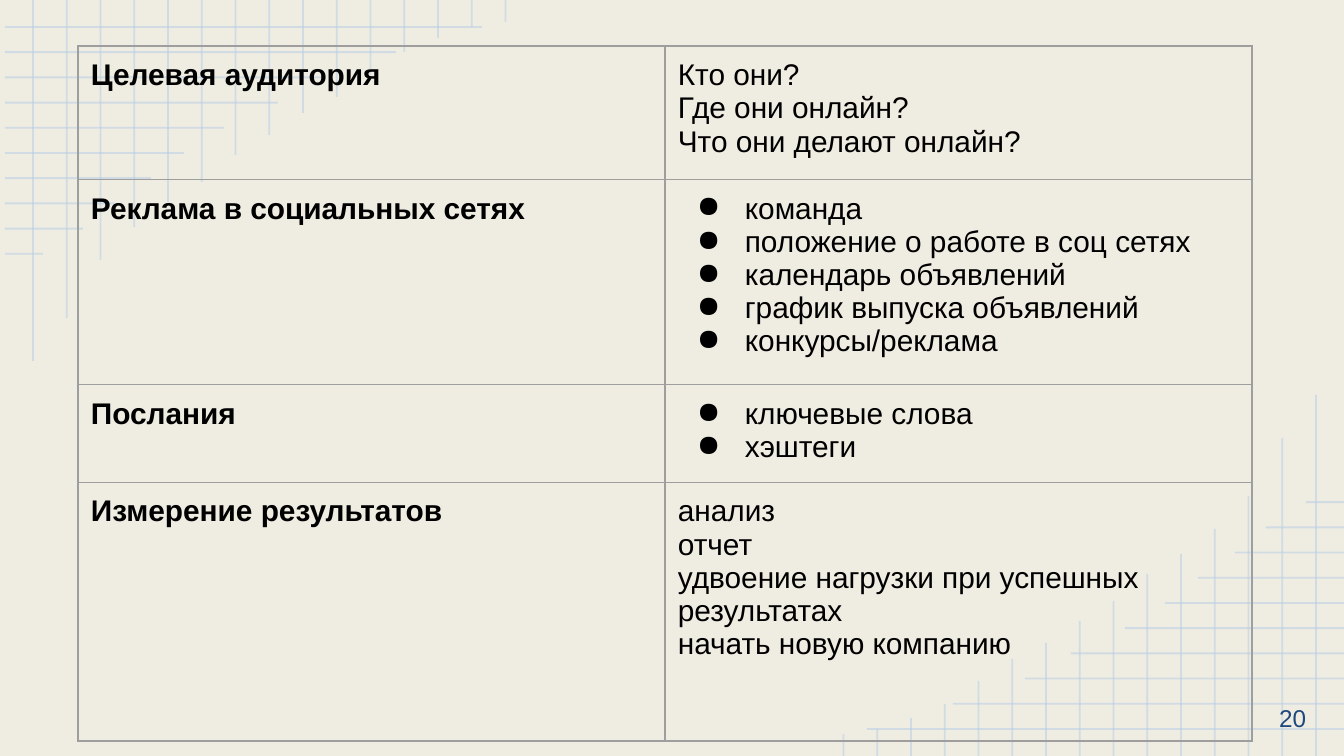
import pptx
import pptx.dml.color
import pptx.enum.shapes
import pptx.enum.text
import pptx.oxml.ns
import pptx.util
from lxml import etree

EMU_PER_PX = 914400 / 134.4
WIDTH, HEIGHT = 1344, 756
GRID_EDGE = 5
ROW_ENDS = [482, 396, 324, 278, 224, 184, 151, 114, 83, 43]
COLUMN_ENDS = [361, 318, 260, 227, 202, 182, 155, 135, 113, 97, 75, 52, 38, 27, 22]

PLAN = [
    ("Целевая аудитория", ["Кто они?", "Где они онлайн?", "Что они делают онлайн?"], False, 127),
    ("Реклама в социальных сетях",
     ["команда", "положение о работе в соц сетях", "календарь объявлений",
      "график выпуска объявлений", "конкурсы/реклама"], True, 193),
    ("Послания", ["ключевые слова", "хэштеги"], True, 93),
    ("Измерение результатов",
     ["анализ", "отчет", "удвоение нагрузки при успешных результатах",
      "начать новую компанию"], False, 259),
]


def px(length):
    return pptx.util.Emu(round(length * EMU_PER_PX))


def color(value):
    return pptx.dml.color.RGBColor.from_string(value)


def add_element(parent, tag, **attributes):
    return etree.SubElement(parent, pptx.oxml.ns.qn(tag), attributes)


def set_font(paragraph, size, value, bold=False):
    font = paragraph.font
    font.name = "Arial"
    font.size = pptx.util.Pt(size)
    font.bold = bold
    font.color.rgb = color(value)


def set_margins(box):
    box.margin_left = box.margin_right = box.margin_top = box.margin_bottom = px(13)


def add_grid_line(slide, start, end):
    line = slide.shapes.add_connector(
        pptx.enum.shapes.MSO_CONNECTOR.STRAIGHT, *map(px, start + end))
    line.line.color.rgb = color("B7CCE4")
    line.line.width = pptx.util.Pt(1)
    tint = line.line.fill._xPr.find(".//" + pptx.oxml.ns.qn("a:srgbClr"))
    add_element(tint, "a:alpha", val="53000")
    add_element(line._element.spPr, "a:effectLst")


def add_corner_grid(slide, turned):
    def place(x, y):
        return (WIDTH + GRID_EDGE - x, HEIGHT - y) if turned else (x, y)

    for index, end in enumerate(ROW_ENDS):
        y = 27 + 25.2 * index
        add_grid_line(slide, place(GRID_EDGE, y), place(end, y))
    for index, end in enumerate(COLUMN_ENDS):
        x = 33 + 33.75 * index
        add_grid_line(slide, place(x, end), place(x, 0))


def add_page_number(slide, number):
    box = slide.shapes.add_textbox(px(1239), px(680), px(80), px(76))
    frame = box.text_frame
    frame.word_wrap = True
    frame.vertical_anchor = pptx.enum.text.MSO_ANCHOR.MIDDLE
    set_margins(frame)
    frame.text = number
    paragraph = frame.paragraphs[0]
    paragraph.alignment = pptx.enum.text.PP_ALIGN.RIGHT
    set_font(paragraph, 13, "1F497D")


def add_bullet(paragraph):
    properties = paragraph._p.get_or_add_pPr()
    properties.set("marL", str(px(67)))
    properties.set("indent", str(px(-48)))
    bullet_color = add_element(properties, "a:buClr")
    add_element(bullet_color, "a:srgbClr", val="000000")
    add_element(properties, "a:buChar", char="●")


def set_borders(cell):
    properties = cell._tc.get_or_add_tcPr()
    for side in "LRTB":
        border = add_element(properties, f"a:ln{side}", w=str(pptx.util.Pt(0.75)))
        fill = add_element(border, "a:solidFill")
        add_element(fill, "a:srgbClr", val="9E9E9E")


def fill_cell(cell, lines, bold=False, bulleted=False):
    set_borders(cell)
    cell.fill.background()
    set_margins(cell)
    cell.text = "\n".join(lines)
    for paragraph in cell.text_frame.paragraphs:
        if bulleted:
            add_bullet(paragraph)
        set_font(paragraph, 16, "000000", bold)


def add_plan_table(slide):
    height = sum(row_height for *_, row_height in PLAN)
    frame = slide.shapes.add_table(len(PLAN), 2, px(78), px(46), px(1174), px(height))
    table = frame.table
    table.first_row = table.horz_banding = False
    for index, (topic, details, bulleted, row_height) in enumerate(PLAN):
        table.rows[index].height = px(row_height)
        fill_cell(table.cell(index, 0), [topic], bold=True)
        fill_cell(table.cell(index, 1), details, bulleted=bulleted)


def main():
    presentation = pptx.Presentation()
    presentation.slide_width, presentation.slide_height = px(WIDTH), px(HEIGHT)
    slide = presentation.slides.add_slide(presentation.slide_layouts[6])
    slide.background.fill.solid()
    slide.background.fill.fore_color.rgb = color("EFEDE2")
    for turned in (False, True):
        add_corner_grid(slide, turned)
    add_page_number(slide, "20")
    add_plan_table(slide)
    presentation.save("out.pptx")


if __name__ == "__main__":
    main()
